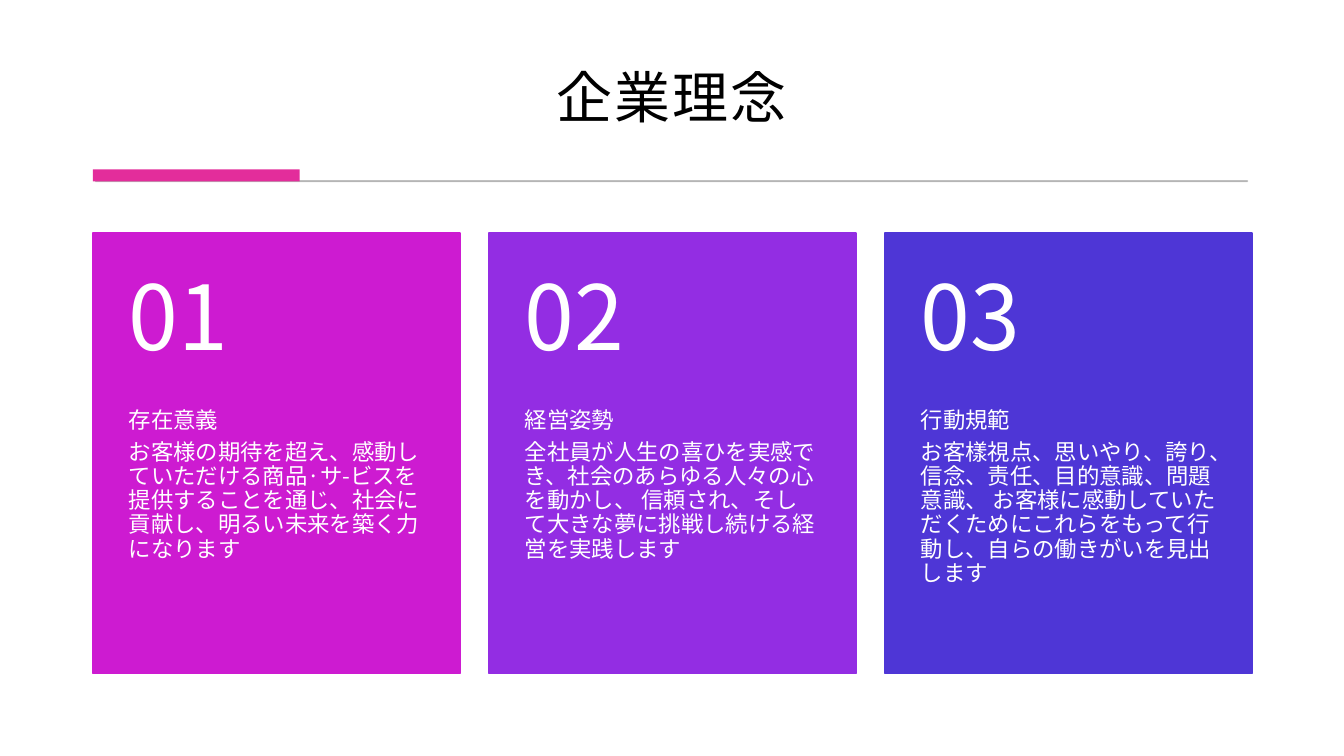
"""Build the corporate philosophy slide with three numbered cards."""
from dataclasses import dataclass

from lxml import etree
from pptx import Presentation
from pptx.dml.color import RGBColor
from pptx.enum.lang import MSO_LANGUAGE_ID
from pptx.enum.shapes import MSO_SHAPE
from pptx.enum.text import MSO_ANCHOR, MSO_AUTO_SIZE, PP_ALIGN
from pptx.oxml.ns import qn
from pptx.util import Cm, Pt

RECT = MSO_SHAPE.RECTANGLE
TOP, MIDDLE, BOTTOM = MSO_ANCHOR.TOP, MSO_ANCHOR.MIDDLE, MSO_ANCHOR.BOTTOM
LEFT, CENTER = PP_ALIGN.LEFT, PP_ALIGN.CENTER
NO_FIT = MSO_AUTO_SIZE.NONE
JAPANESE = MSO_LANGUAGE_ID.JAPANESE


@dataclass(frozen=True)
class Theme:
    """Hold the font, colours and type sizes."""

    font: str = "Noto Sans CJK JP"
    ink: str = "000000"
    paper: str = "FFFFFF"
    rule: str = "595959"
    accent: str = "E32D9B"
    title: int = 40
    number: int = 64
    body: int = 16


@dataclass(frozen=True)
class Box:
    """Place a rectangle, in centimetres."""

    left: float
    top: float
    width: float
    height: float

    def lengths(self) -> tuple:
        """Return left, top, width and height as lengths."""
        return Cm(self.left), Cm(self.top), Cm(self.width), Cm(self.height)


@dataclass(frozen=True)
class Card:
    """Describe one principle."""

    color: str
    heading: str
    body: str


THEME = Theme()
MARGIN, CARD_TOP = 2.34, 5.87
CARD_W, CARD_H, CARD_PITCH = 9.25, 11.1, 9.98
NUMBER_H = 4.44
TITLE_BOX = Box(MARGIN, 0.71, 29.18, 2.82)
RULE_BOX = Box(2.41, 4.55, 29.03, 0.03)
ACCENT_BOX = Box(MARGIN, 4.27, 5.21, 0.3)
CARDS = (
    Card("CD1BD1", "存在意義",
         "お客様の期待を超え、感動していただける商品·サ-ビスを 提供することを通じ、"
         "社会に貢献し、明るい未来を築く力になります"),
    Card("932DE3", "経営姿勢",
         "全社員が人生の喜ひを実感でき、社会のあらゆる人々の心を動かし、 信頼され、"
         "そして大きな夢に挑戦し続ける経営を実践します"),
    Card("4E36D6", "行動規範",
         "お客樣視点、思いやり、誇り、信念、责任、目的意識、問題意識、 "
         "お客様に感動していただくためにこれらをもって行動し、自らの働きがいを見出します"),
)


def apply(target: object, values: dict) -> None:
    """Set each named attribute on the target."""
    for name, value in values.items():
        setattr(target, name, value)


def write(shape: object, lines: tuple, size: int, color: str, frame: dict,
          insets: tuple, para: dict, tracking: int = 0) -> None:
    """Fill a shape with formatted paragraphs."""
    tf = shape.text_frame
    sides = ("margin_left", "margin_top", "margin_right", "margin_bottom")
    apply(tf, {"word_wrap": True, "auto_size": NO_FIT, **frame})
    apply(tf, {side: Cm(inset) for side, inset in zip(sides, insets)})
    for i, line in enumerate(lines):
        p = tf.add_paragraph() if i else tf.paragraphs[0]
        apply(p, para)
        r = p.add_run()
        r.text = line
        apply(r.font, {"size": Pt(size), "name": THEME.font, "language_id": JAPANESE})
        r.font.color.rgb = RGBColor.from_string(color)
        rpr = r.font._element
        etree.SubElement(rpr, qn("a:ea")).set("typeface", THEME.font)
        if tracking:
            rpr.set("spc", str(tracking))


def add_rect(shapes: object, box: Box, color: str, line: float = 0,
             alpha: int = 100) -> None:
    """Draw a flat rectangle, with an outline of the same colour if asked."""
    sp = shapes.add_shape(RECT, *box.lengths())
    sp.shadow.inherit = False
    fills = [sp.fill]
    if line:
        sp.line.width = Pt(line)
        fills.append(sp.line.fill)
    else:
        sp.line.fill.background()
    for fill in fills:
        fill.solid()
        fill.fore_color.rgb = RGBColor.from_string(color)
    if alpha < 100:
        for clr in sp._element.spPr.findall(".//" + qn("a:srgbClr")):
            etree.SubElement(clr, qn("a:alpha")).set("val", str(alpha * 1000))


def add_card(s: object, card: Card, index: int) -> None:
    """Draw one grouped card with its number, heading and body."""
    shapes = s.shapes.add_group_shape().shapes
    left = MARGIN + index * CARD_PITCH
    add_rect(shapes, Box(left, CARD_TOP, CARD_W, CARD_H), card.color, 1)
    body_box = Box(left, CARD_TOP + NUMBER_H, CARD_W, CARD_H - NUMBER_H)
    number_box = Box(left, CARD_TOP, CARD_W, NUMBER_H)
    para = {"alignment": LEFT, "line_spacing": 0.9, "space_after": Pt(5.6)}
    for box, lines, size, anchor, insets in (
        (body_box, (card.heading, card.body), THEME.body, TOP, (0.91, 0, 0.91, 0.91)),
        (number_box, (f"{index + 1:02}",), THEME.number, MIDDLE, (0.91, 0.46, 0.91, 0.46)),
    ):
        write(shapes.add_textbox(*box.lengths()), lines, size, THEME.paper,
              {"vertical_anchor": anchor}, insets, para)


def main() -> None:
    """Build and save the slide."""
    prs = Presentation()
    apply(prs, {"slide_width": Cm(33.87), "slide_height": Cm(19.05)})
    s = prs.slides.add_slide(prs.slide_layouts[5])
    s.background.fill.solid()
    s.background.fill.fore_color.rgb = RGBColor.from_string(THEME.paper)
    title = s.shapes.title
    apply(title, dict(zip(("left", "top", "width", "height"), TITLE_BOX.lengths())))
    write(title, ("企業理念",), THEME.title, THEME.ink, {"vertical_anchor": BOTTOM},
          (0.3, 0.3, 0.3, 0.25),
          {"alignment": CENTER, "line_spacing": 1.1, "space_before": Pt(0)}, 150)
    add_rect(s.shapes, RULE_BOX, THEME.rule, 0.75, 30)
    add_rect(s.shapes, ACCENT_BOX, THEME.accent)
    for index, card in enumerate(CARDS):
        add_card(s, card, index)
    prs.save("out.pptx")


if __name__ == "__main__":
    main()
